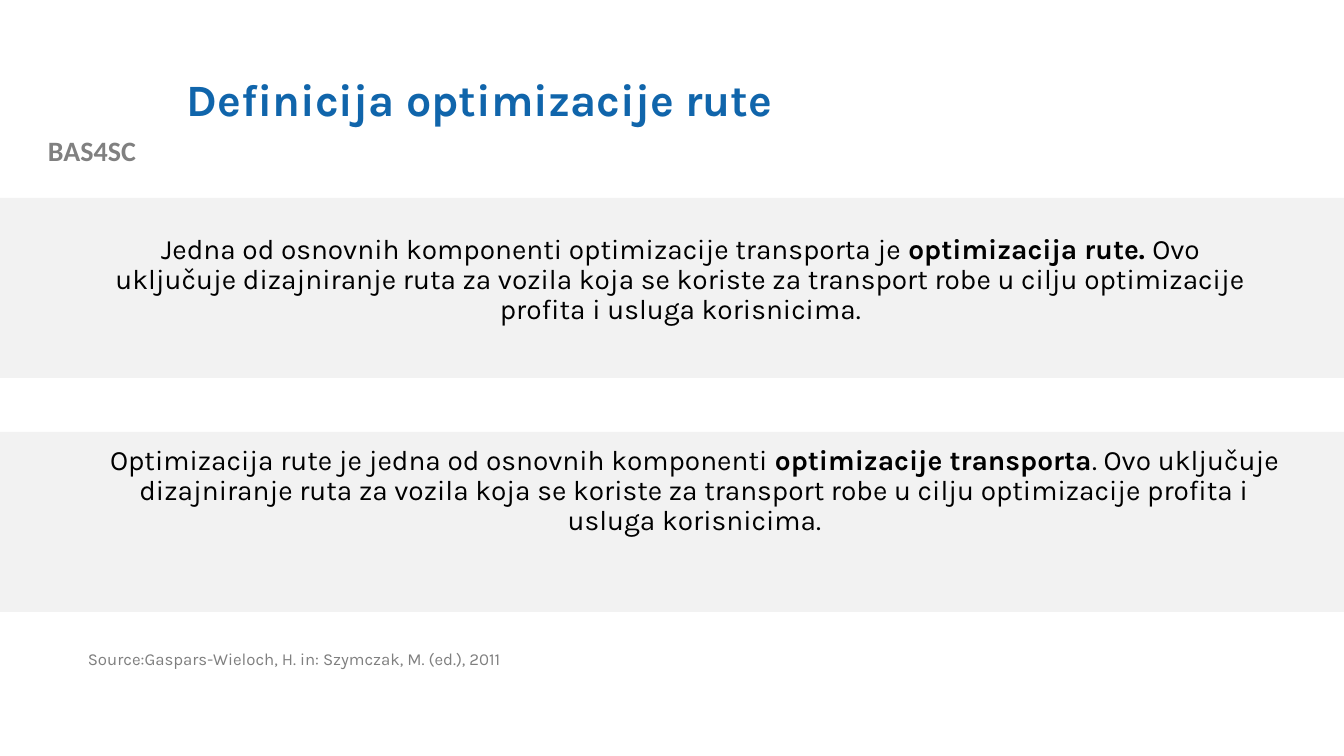
import pptx
import pptx.util
import pptx.dml.color
import pptx.enum.shapes
import pptx.enum.text

PX = 9071.43
COLORS = {"band": "F2F2F2", "title": "1065AB", "body": "000000", "project": "808080", "source": "7F7F7F"}
ALIGN = pptx.enum.text.PP_ALIGN
ANCHOR = pptx.enum.text.MSO_ANCHOR


def emu(*lengths):
    return [round(length * PX) for length in lengths]


def add_text(box, parts, size, color, font="Karla", align=ALIGN.LEFT, anchor=ANCHOR.TOP, spacing=0.9):
    frame = slide.shapes.add_textbox(*emu(*box)).text_frame
    frame.word_wrap = True
    frame.vertical_anchor = anchor
    paragraph = frame.paragraphs[0]
    paragraph.alignment = align
    paragraph.line_spacing = spacing
    for words, bold in parts:
        run = paragraph.add_run()
        run.text = words
        run.font.name = font
        run.font.size = pptx.util.Pt(size)
        run.font.bold = bold
        run.font.color.rgb = pptx.dml.color.RGBColor.from_string(COLORS[color])


deck = pptx.Presentation()
deck.slide_width, deck.slide_height = emu(1344, 756)
slide = deck.slides.add_slide(deck.slide_layouts[6])

for band_top in (198, 432):
    band = slide.shapes.add_shape(pptx.enum.shapes.MSO_SHAPE.RECTANGLE, *emu(0, band_top, 1344, 180))
    band.shadow.inherit = False
    band.fill.solid()
    band.fill.fore_color.rgb = pptx.dml.color.RGBColor.from_string(COLORS["band"])
    band.line.fill.background()

add_text((0, 129, 184, 44), [("BAS4SC", True)], 20, "project", font="Calibri", align=ALIGN.CENTER, spacing=1.0)
add_text((177, 40, 1075, 123), [("Definicija optimizacije rute", True)], 32, "title", anchor=ANCHOR.MIDDLE)

design = (
    "Ovo uključuje dizajniranje ruta za vozila koja se koriste za transport robe "
    "u cilju optimizacije profita i usluga korisnicima."
)
definitions = [
    ((101, 230, 1159, 170), [
        ("Jedna od osnovnih komponenti optimizacije transporta je ", False),
        ("optimizacija rute. ", True),
        (design, False),
    ]),
    ((94, 441, 1201, 170), [
        ("Optimizacija rute je jedna od osnovnih komponenti ", False),
        ("optimizacije transporta", True),
        (". " + design, False),
    ]),
]
for box, parts in definitions:
    add_text(box, parts, 20, "body", align=ALIGN.CENTER)

add_text((78, 646, 564, 52), [("Source:Gaspars-Wieloch, H. in: Szymczak, M. (ed.), 2011", False)], 12, "source")

deck.save("out.pptx")
